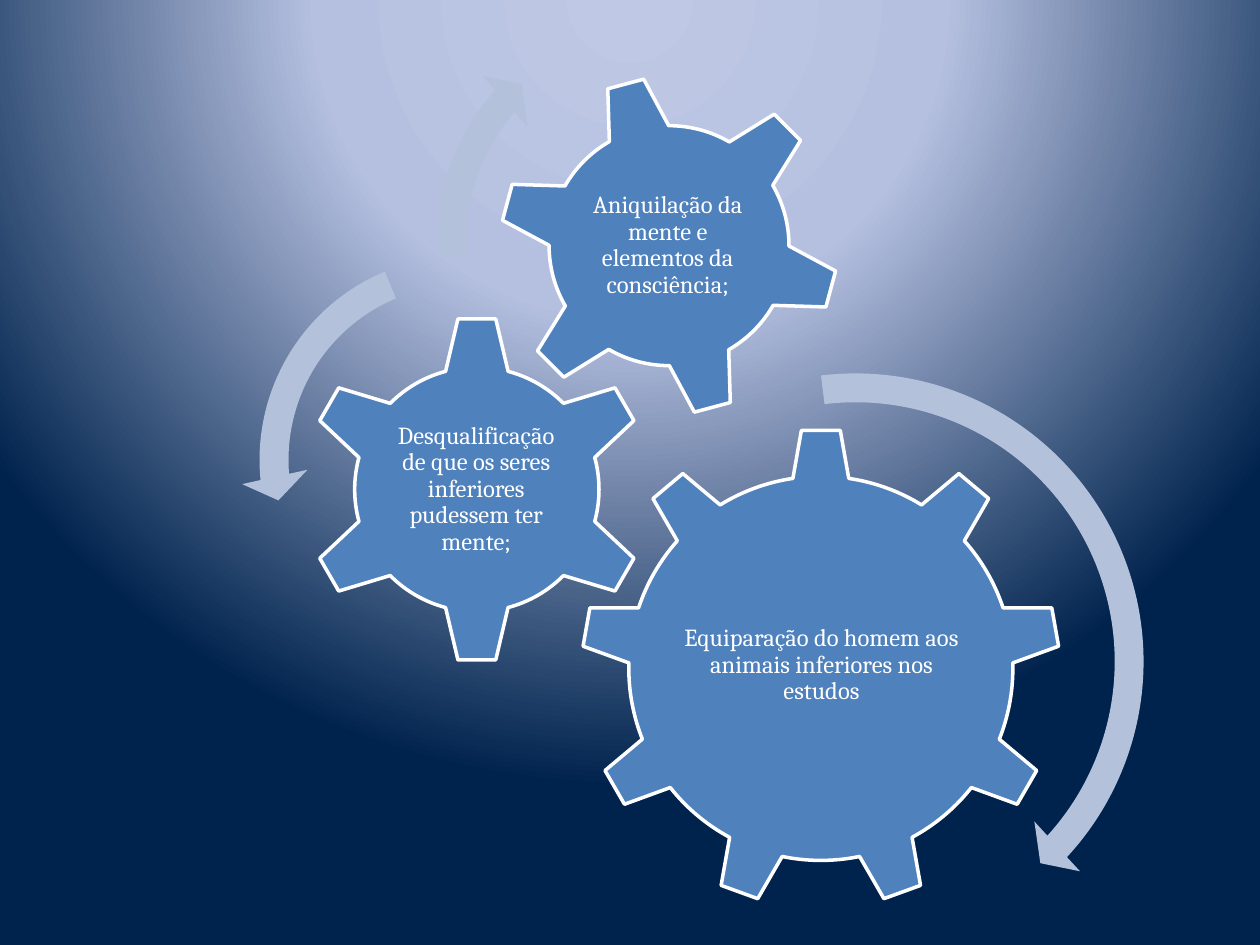
from lxml import etree
from pptx import Presentation
from pptx.dml.color import RGBColor
from pptx.enum.shapes import MSO_SHAPE as Shape
from pptx.enum.text import MSO_ANCHOR as Anchor, PP_ALIGN as Align
from pptx.oxml import parse_xml
from pptx.util import Inches, Pt

BLUE = RGBColor(0x4F, 0x81, 0xBD)
PALE_BLUE = RGBColor(0xB3, 0xC1, 0xDB)
WHITE = RGBColor(0xFF, 0xFF, 0xFF)
GLOW = RGBColor(0xBF, 0xC9, 0xE5)
HAZE = RGBColor(0xB5, 0xC0, 0xE0)
NAVY = RGBColor(0x00, 0x23, 0x4D)
DRAWING_NS = "http://schemas.openxmlformats.org/drawingml/2006/main"


def add_shape(kind, left, top, size, color):
    """Add a square, shadowless shape without an outline."""
    shape = slide.shapes.add_shape(
        kind, Inches(left), Inches(top), Inches(size), Inches(size))
    shape.shadow.inherit = False
    shape.fill.solid()
    shape.fill.fore_color.rgb = color
    shape.line.fill.background()
    return shape


def add_text(text, left, top, width, height, size=14, font="Cambria", color=WHITE):
    box = slide.shapes.add_textbox(
        Inches(left), Inches(top), Inches(width), Inches(height))
    frame = box.text_frame
    frame.word_wrap = True
    frame.vertical_anchor = Anchor.MIDDLE
    frame.margin_left = frame.margin_right = Inches(0.02)
    frame.margin_top = frame.margin_bottom = Inches(0.02)
    para = frame.paragraphs[0]
    para.alignment = Align.CENTER
    para.line_spacing = 0.9
    span = para.add_run()
    span.text = text
    span.font.size = Pt(size)
    span.font.name = font
    span.font.color.rgb = color


deck = Presentation()
deck.slide_width = Inches(10)
deck.slide_height = Inches(7.5)
slide = deck.slides.add_slide(deck.slide_layouts[6])

# Radial background, centred above the slide
slide.background.fill.solid()
solid = slide.element.find(f".//{{{DRAWING_NS}}}solidFill")
stops = "".join(
    f'<a:gs pos="{percent * 1000}"><a:srgbClr val="{color}"/></a:gs>'
    for percent, color in [(0, GLOW), (40, HAZE), (100, NAVY)])
gradient = parse_xml(
    f'<a:gradFill xmlns:a="{DRAWING_NS}" rotWithShape="1"><a:gsLst>{stops}</a:gsLst>'
    '<a:path path="circle"><a:fillToRect l="50000" t="-80000" r="50000" b="180000"/>'
    '</a:path></a:gradFill>')
solid.getparent().replace(solid, gradient)

# Gears: kind, left, top, size, rotation, text, text box
gears = [
    (Shape.GEAR_9, 4.61, 3.4, 3.81, 0,
     "Equiparação do homem aos animais inferiores nos estudos",
     (5.38, 4.3, 2.28, 1.96)),
    (Shape.GEAR_6, 2.4, 2.5, 2.77, 0,
     "Desqualificação de que os seres inferiores pudessem ter mente;",
     (3.09, 3.2, 1.38, 1.37)),
    (Shape.GEAR_6, 3.95, 0.59, 2.72, 345,
     "Aniquilação da mente e elementos da consciência;",
     (4.54, 1.19, 1.52, 1.52)),
]
for kind, left, top, size, rotation, text, text_area in gears:
    gear = add_shape(kind, left, top, size, BLUE)
    gear.rotation = rotation
    gear.line.color.rgb = WHITE
    gear.line.width = Pt(2)
    add_text(text, *text_area)

# Arrows: kind, left, top, size, band percent, angles in degrees, head percent
arrows = [
    (Shape.CIRCULAR_ARROW, 4.35, 2.81, 4.88, 4.7, (4.98, 42.52, 263.13), 5.5),
    (Shape.LEFT_CIRCULAR_ARROW, 1.91, 1.88, 3.54, 6.5, (7.17, 174.82, 247.3), 7.5),
    (Shape.CIRCULAR_ARROW, 3.32, -0.01, 3.82, 6, (6.57, 221.9, 175.14), 7),
]
for kind, left, top, size, band, angles, head in arrows:
    arrow = add_shape(kind, left, top, size, PALE_BLUE)
    # One degree is 60000 units, and an adjustment of 1.0 is 100000 units
    values = [band / 100, *(angle * 0.6 for angle in angles), head / 100]
    for index, value in enumerate(values):
        arrow.adjustments[index] = value

deck.save("out.pptx")
